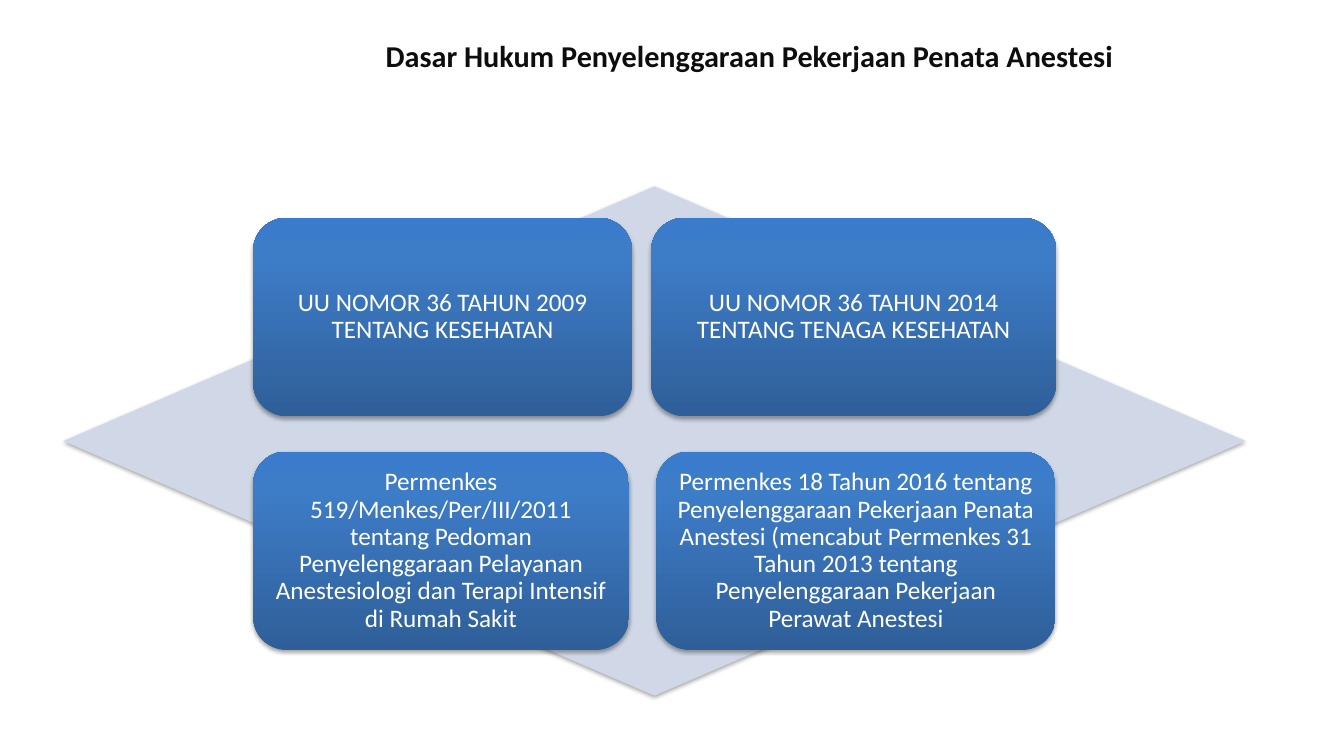
from copy import deepcopy
from lxml.etree import SubElement as Sub
from pptx import Presentation
from pptx.dml.color import RGBColor as Rgb
from pptx.enum.shapes import MSO_SHAPE as Kind
from pptx.enum.text import MSO_ANCHOR as Anchor, PP_ALIGN as Align
from pptx.oxml.ns import qn
from pptx.util import Cm, Pt

HUES = {"title": "0D0D0D", "diamond": "D0D8E8", "text": "FFFFFF", "shade": "000000",
        "low": "2F5F99", "mid": "3D7CC7", "top": "3A7CCB"}
STOPS = [(0, "low"), (0.8, "mid"), (1, "top")]
SHADE = {"blurRad": Pt(3.1), "dist": Pt(1.8), "dir": 90 * 60000, "rotWithShape": 0}
INSET = Cm(0.18)
FRAME = {"word_wrap": True, "vertical_anchor": Anchor.MIDDLE, "margin_left": INSET,
         "margin_right": INSET, "margin_top": INSET, "margin_bottom": INSET}
ROWS = [5.49, 11.38]
HIGH = 5
LAWS = [
    (6.38, 0, 9.55, "UU NOMOR 36 TAHUN 2009 TENTANG KESEHATAN"),
    (16.41, 0, 10.21, "UU NOMOR 36 TAHUN 2014 TENTANG TENAGA KESEHATAN"),
    (16.54, 1, 10.06, "Permenkes 18 Tahun 2016 tentang Penyelenggaraan Pekerjaan Penata "
     "Anestesi (mencabut Permenkes 31 Tahun 2013 tentang Penyelenggaraan Pekerjaan "
     "Perawat Anestesi"),
    (6.38, 1, 9.47, "Permenkes 519/Menkes/Per/III/2011 tentang Pedoman Penyelenggaraan "
     "Pelayanan Anestesiologi dan Terapi Intensif di Rumah Sakit"),
]


def draw(kind, *spot):
    shape = slide.shapes.add_shape(kind, *map(Cm, spot))
    shape.line.fill.background()
    shape.shadow.inherit = False
    list_ = shape._element.spPr.find(qn("a:effectLst"))
    cast = Sub(list_, qn("a:outerShdw"), {key: str(val) for key, val in SHADE.items()})
    tint = Sub(cast, qn("a:srgbClr"), val=HUES["shade"])
    Sub(tint, qn("a:alpha"), val="35000")
    return shape


def write(frame, text, hue, look, **font):
    for key, val in look.items():
        setattr(frame, key, val)
    para = frame.paragraphs[0]
    para.text = text
    for key, val in font.items():
        setattr(para.font, key, val)
    para.font.name = "Calibri"
    para.font.color.rgb = Rgb.from_string(HUES[hue])
    return para


deck = Presentation()
deck.slide_width, deck.slide_height = Cm(33.87), Cm(19.05)
slide = deck.slides.add_slide(deck.slide_layouts[6])

title = slide.shapes.add_textbox(Cm(9.47), Cm(0.79), Cm(24.4), Cm(1.19))
write(title.text_frame, "Dasar Hukum Penyelenggaraan Pekerjaan Penata Anestesi", "title",
      {"word_wrap": True, "vertical_anchor": Anchor.MIDDLE}, size=Pt(21.6), bold=True)

diamond = draw(Kind.DIAMOND, 1.6, 4.7, 29.79, 12.83)
diamond.fill.solid()
diamond.fill.fore_color.rgb = Rgb.from_string(HUES["diamond"])

for left, row, width, text in LAWS:
    box = draw(Kind.ROUNDED_RECTANGLE, left, ROWS[row], width, HIGH)
    box.fill.gradient()
    box.fill.gradient_angle = 90
    stops = box._element.spPr.find(qn("a:gradFill")).find(qn("a:gsLst"))
    stops.append(deepcopy(stops[-1]))
    for stop, (place, hue) in zip(box.fill.gradient_stops, STOPS):
        stop.position = place
        stop.color.rgb = Rgb.from_string(HUES[hue])
    para = write(box.text_frame, text, "text", FRAME, size=Pt(18))
    para.alignment = Align.CENTER
    para.line_spacing = 0.9

deck.save("out.pptx")
